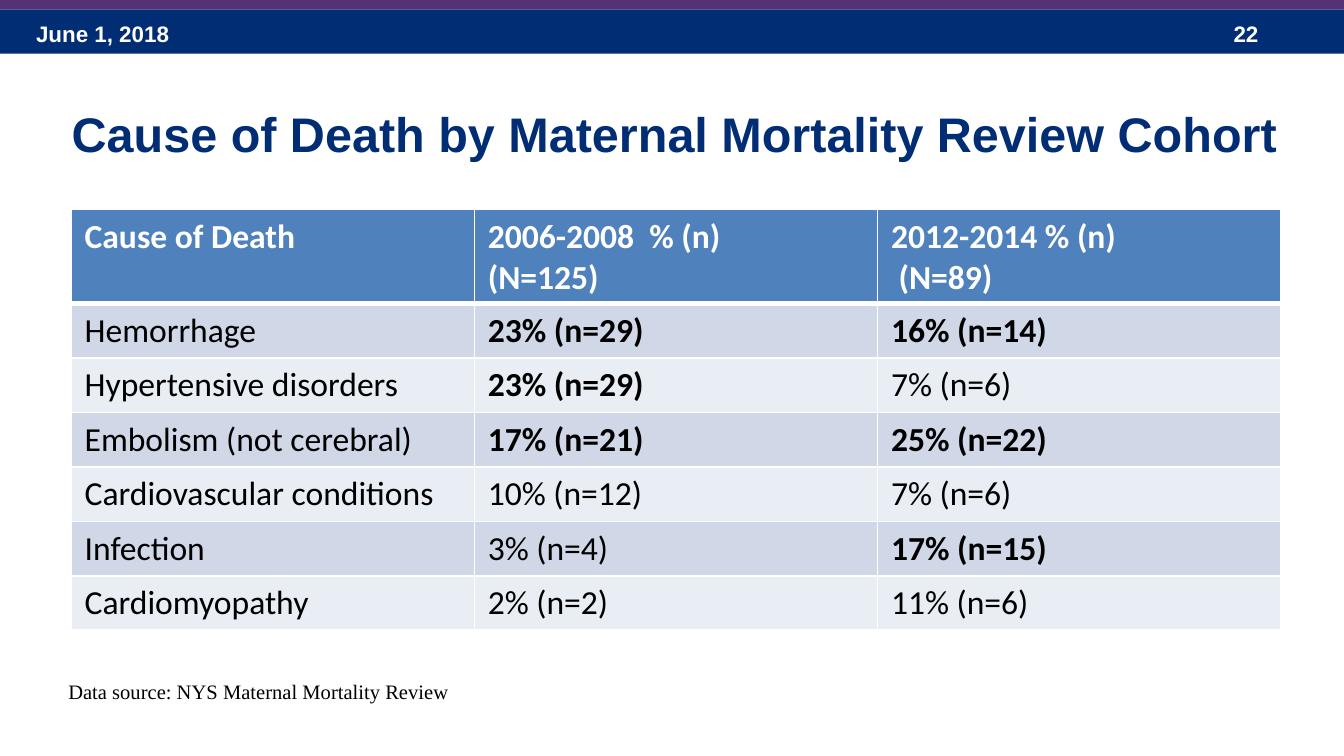
import lxml.etree
import pptx
import pptx.dml.color
import pptx.enum.shapes
import pptx.enum.text
import pptx.oxml.ns
import pptx.util

WIDTH = 10
HEIGHT = WIDTH * 9 / 16
NAVY, PURPLE, WHITE, BLACK = "002D73", "553278", "FFFFFF", "000000"
HEADER_FILL, BAND_FILLS = "4F81BD", ("D0D8E8", "E9EDF4")
ALIGN = pptx.enum.text.PP_ALIGN
ANCHOR = pptx.enum.text.MSO_ANCHOR

HEADINGS = ("Cause of Death", "2006-2008  % (n)\n(N=125)", "2012-2014 % (n)\n (N=89)")
CAUSES = (
    ("Hemorrhage", "23% (n=29)", "16% (n=14)"),
    ("Hypertensive disorders", "23% (n=29)", "7% (n=6)"),
    ("Embolism (not cerebral)", "17% (n=21)", "25% (n=22)"),
    ("Cardiovascular conditions", "10% (n=12)", "7% (n=6)"),
    ("Infection", "3% (n=4)", "17% (n=15)"),
    ("Cardiomyopathy", "2% (n=2)", "11% (n=6)"),
)
LEADING_SHARES = {"23% (n=29)", "17% (n=21)", "16% (n=14)", "25% (n=22)", "17% (n=15)"}


def rgb(value):
    return pptx.dml.color.RGBColor.from_string(value)


def inches(*values):
    return [pptx.util.Inches(v) for v in values]


def style_text(tf, font, size, color, bold=False, align=ALIGN.LEFT):
    for p in tf.paragraphs:
        p.alignment = align
        for r in p.runs:
            r.font.name = font
            r.font.size = pptx.util.Pt(size)
            r.font.bold = bold
            r.font.color.rgb = rgb(color)


def add_text(slide, box, text, font, size, color, bold=False, align=ALIGN.LEFT, wrap=True):
    tf = slide.shapes.add_textbox(*inches(*box)).text_frame
    tf.word_wrap = wrap
    tf.vertical_anchor = ANCHOR.MIDDLE
    tf.text = text
    style_text(tf, font, size, color, bold, align)


def add_band(slide, box, color):
    sp = slide.shapes.add_shape(pptx.enum.shapes.MSO_SHAPE.RECTANGLE, *inches(*box))
    sp.shadow.inherit = False
    sp.fill.solid()
    sp.fill.fore_color.rgb = rgb(color)
    sp.line.fill.background()


def add_banner(slide, box, date, number):
    """Navy bar with a thin purple strip above it, the date and the slide number."""
    left, top, width, height = box
    strip = 0.09
    add_band(slide, (left, top + strip, width, height - strip), NAVY)
    add_band(slide, (left, top, width, strip), PURPLE)
    text_top, text_height = top + 0.12, 0.3
    for text, start, share in ((date, 0.017, 0.233), (number, 0.908, 0.075)):
        text_box = (left + start * width, text_top, share * width, text_height)
        add_text(slide, text_box, text, "Arial", 12, WHITE, bold=True)


def set_borders(cell, color, **widths):
    """Draw the cell edges named lnL, lnR, lnT and lnB at widths in points."""
    qn = pptx.oxml.ns.qn
    properties = cell._tc.get_or_add_tcPr()
    for position, (edge, points) in enumerate(widths.items()):
        line = lxml.etree.Element(qn(f"a:{edge}"), w=str(pptx.util.Pt(points)))
        fill = lxml.etree.SubElement(line, qn("a:solidFill"))
        lxml.etree.SubElement(fill, qn("a:srgbClr"), val=color)
        properties.insert(position, line)


def add_cause_table(slide, box, headings, rows):
    width, height = box[2:]
    header_height = 0.7
    frame = slide.shapes.add_table(len(rows) + 1, len(headings), *inches(*box))
    table = frame.table
    for column in table.columns:
        column.width = pptx.util.Inches(width / len(headings))
    for i, row in enumerate(table.rows):
        row_height = (height - header_height) / len(rows) if i else header_height
        row.height = pptx.util.Inches(row_height)
    for i, texts in enumerate((headings, *rows)):
        for j, text in enumerate(texts):
            cell = table.cell(i, j)
            cell.text_frame.text = text
            cell.fill.solid()
            cell.fill.fore_color.rgb = rgb(BAND_FILLS[(i - 1) % 2] if i else HEADER_FILL)
            bold = i == 0 or text in LEADING_SHARES
            style_text(cell.text_frame, "Calibri", 18, BLACK if i else WHITE, bold)
            set_borders(cell, WHITE, lnL=1, lnR=1, lnT=3 if i == 1 else 1, lnB=1 if i else 3)


def build_slide(prs):
    slide = prs.slides.add_slide(prs.slide_layouts[6])
    add_banner(slide, (0, -0.02, WIDTH, 0.42), "June 1, 2018", "22")
    add_text(slide, (0.05, 0.52, 9.95, 0.94),
             "Cause of Death by Maternal Mortality Review Cohort",
             "Arial", 26, NAVY, bold=True, align=ALIGN.CENTER)
    add_cause_table(slide, (0.53, 1.56, 9, 3.13), HEADINGS, CAUSES)
    add_text(slide, (0.41, 5, 3.04, 0.29), "Data source: NYS Maternal Mortality Review",
             "Times New Roman", 11, BLACK, wrap=False)


def main():
    prs = pptx.Presentation()
    prs.slide_width, prs.slide_height = inches(WIDTH, HEIGHT)
    build_slide(prs)
    prs.save("out.pptx")


if __name__ == "__main__":
    main()
